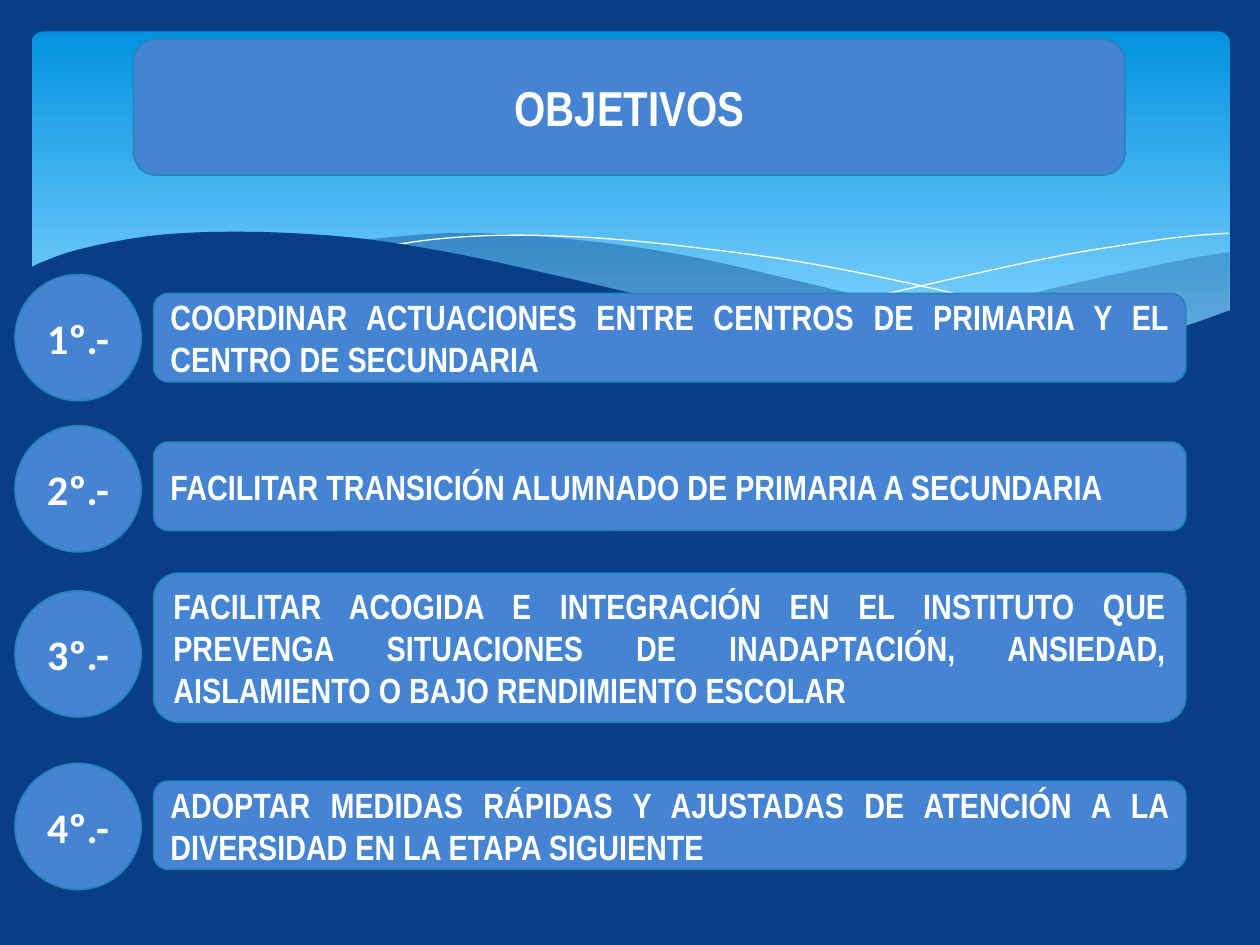
from lxml import etree
from pptx import Presentation
from pptx.dml.color import RGBColor
from pptx.enum import shapes, text
from pptx.oxml.ns import qn
from pptx.util import Inches, Pt

COLORS = {
    "navy": "073E87", "sky": "0293E0", "pale": "83D3FE",
    "panel": "4584D3", "edge": "2487BB", "white": "FFFFFF",
}
TITLE = "OBJETIVOS"

# number, circle top, bar top, bar height, wording
GOALS = [
    ("1º.-", 2.18, 2.33, 0.7, "COORDINAR ACTUACIONES ENTRE CENTROS DE PRIMARIA Y EL CENTRO DE SECUNDARIA"),
    ("2º.-", 3.38, 3.51, 0.7, "FACILITAR TRANSICIÓN ALUMNADO DE PRIMARIA A SECUNDARIA"),
    ("3º.-", 4.69, 4.55, 1.18, "FACILITAR ACOGIDA E INTEGRACIÓN EN EL INSTITUTO QUE PREVENGA SITUACIONES "
     "DE INADAPTACIÓN, ANSIEDAD, AISLAMIENTO O BAJO RENDIMIENTO ESCOLAR"),
    ("4º.-", 6.06, 6.2, 0.7, "ADOPTAR MEDIDAS RÁPIDAS Y AJUSTADAS DE ATENCIÓN A LA DIVERSIDAD EN LA ETAPA SIGUIENTE"),
]
BAR_LEFT, BAR_WIDTH = 1.22, 8.19
CIRCLE_LEFT, CIRCLE_SIZE = 0.12, 1

# Each wave is a chain of edges; an edge is a curve through its points.
RIGHT_WAVE = [
    [(9.76, 2), (9.35, 2.07), (8.61, 2.23), (7.79, 2.42), (7.06, 2.57), (6.61, 2.65)],
    [(6.61, 2.65), (7.19, 2.72), (7.69, 2.77), (8.14, 2.78), (8.63, 2.75), (9.05, 2.69), (9.42, 2.59), (9.76, 2.47)],
]
MIDDLE_WAVE = [
    [(8.93, 2.73), (8.07, 2.6), (7.06, 2.4), (6.29, 2.22), (5.55, 2.05), (4.89, 1.94),
     (4.2, 1.87), (3.61, 1.85), (3.13, 1.88), (2.86, 1.91)],
    [(2.86, 1.91), (3.62, 2.03), (4.49, 2.22), (5.3, 2.4), (6.01, 2.55), (6.65, 2.66),
     (7.22, 2.74), (7.73, 2.77), (8.18, 2.78), (8.57, 2.77), (8.93, 2.73)],
]
FRONT_WAVE = [
    [(9.77, 2.46), (9.3, 2.62), (8.75, 2.73), (8.09, 2.77), (7.44, 2.74), (6.68, 2.65), (5.79, 2.5),
     (5.03, 2.33), (4.47, 2.2), (3.65, 2.02), (2.92, 1.9), (2.3, 1.85), (1.77, 1.84), (1.32, 1.86),
     (0.95, 1.91), (0.59, 1.99), (0.36, 2.07), (0.23, 2.13)],
    [(0.23, 3.29), (9.77, 3.29)],
]
FALLING_LINE = [[(3.09, 1.95), (3.44, 1.9), (3.87, 1.87), (4.33, 1.87), (4.89, 1.9), (5.56, 1.97), (6.36, 2.08),
                 (7.27, 2.26), (8.31, 2.51), (9.07, 2.72)]]
RISING_LINE = [[(6.13, 2.57), (6.72, 2.41), (7.48, 2.23), (8.36, 2.04), (8.95, 1.94), (9.38, 1.88), (9.75, 1.85)]]


def color(name):
    return RGBColor.from_string(COLORS[name])


def smooth(points, steps=5):
    """Return a Catmull-Rom curve through the points, as short straight steps."""
    padded = [points[0], *points, points[-1]]
    curve = [points[0]]
    for a, b, c, d in zip(padded, padded[1:], padded[2:], padded[3:]):
        for step in range(1, steps + 1):
            t = step / steps
            curve.append(tuple(
                0.5 * (2 * q + (r - p) * t + (2 * p - 5 * q + 4 * r - s) * t ** 2
                       + (3 * q - p - 3 * r + s) * t ** 3)
                for p, q, r, s in zip(a, b, c, d)))
    return curve


def add_curve(slide, edges, closed):
    points = [(Inches(x), Inches(y)) for edge in edges for x, y in smooth(edge)]
    builder = slide.shapes.build_freeform(*points[0], scale=1.0)
    builder.add_line_segments(points[1:], close=closed)
    shape = builder.convert_to_shape()
    shape.shadow.inherit = False
    return shape


def add_wave(slide, edges, opacity=100):
    shape = add_curve(slide, edges, closed=True)
    shape.fill.solid()
    shape.fill.fore_color.rgb = color("navy")
    shape.line.fill.background()
    if opacity < 100:
        fill_color = shape.fill._xPr.find(qn("a:solidFill"))[0]
        etree.SubElement(fill_color, qn("a:alpha")).set("val", str(opacity * 1000))


def add_hairline(slide, edges):
    shape = add_curve(slide, edges, closed=False)
    shape.fill.background()
    shape.line.color.rgb = color("white")
    shape.line.width = Pt(0)


def add_sky(slide):
    shape = slide.shapes.add_shape(
        shapes.MSO_SHAPE.ROUNDED_RECTANGLE, Inches(0.25), Inches(0.25), Inches(9.51), Inches(2.7))
    shape.adjustments[0] = 0.034
    shape.shadow.inherit = False
    shape.line.fill.background()
    shape.fill.gradient()
    shape.fill.gradient_angle = 270
    for stop, name, position in zip(shape.fill.gradient_stops, ("sky", "pale"), (0, 0.9)):
        stop.color.rgb = color(name)
        stop.position = position


def add_panel(slide, kind, box, wording, size, font, align):
    shape = slide.shapes.add_shape(kind, *map(Inches, box))
    shape.shadow.inherit = False
    shape.fill.solid()
    shape.fill.fore_color.rgb = color("panel")
    shape.line.color.rgb = color("edge")
    shape.line.width = Pt(1)
    frame = shape.text_frame
    frame.word_wrap = True
    frame.vertical_anchor = text.MSO_ANCHOR.MIDDLE
    paragraph = frame.paragraphs[0]
    paragraph.alignment = align
    run = paragraph.add_run()
    run.text = wording
    run.font.size = Pt(size)
    run.font.name = font
    run.font.bold = True
    run.font.color.rgb = color("white")


def main():
    presentation = Presentation()
    presentation.slide_width, presentation.slide_height = Inches(10), Inches(7.5)
    slide = presentation.slides.add_slide(presentation.slide_layouts[6])
    slide.background.fill.solid()
    slide.background.fill.fore_color.rgb = color("navy")

    add_sky(slide)
    add_wave(slide, RIGHT_WAVE, opacity=29)
    add_wave(slide, MIDDLE_WAVE, opacity=40)
    add_hairline(slide, FALLING_LINE)
    add_hairline(slide, RISING_LINE)
    add_wave(slide, FRONT_WAVE)

    rounded, oval = shapes.MSO_SHAPE.ROUNDED_RECTANGLE, shapes.MSO_SHAPE.OVAL
    center, justify = text.PP_ALIGN.CENTER, text.PP_ALIGN.JUSTIFY
    add_panel(slide, rounded, (1.06, 0.31, 7.87, 1.08), TITLE, 28, "Arial Narrow", center)
    for number, circle_top, bar_top, bar_height, wording in GOALS:
        add_panel(slide, rounded, (BAR_LEFT, bar_top, BAR_WIDTH, bar_height),
                  wording, 20, "Arial Narrow", justify)
        add_panel(slide, oval, (CIRCLE_LEFT, circle_top, CIRCLE_SIZE, CIRCLE_SIZE),
                  number, 24, "Calibri", center)

    presentation.save("out.pptx")


if __name__ == "__main__":
    main()
